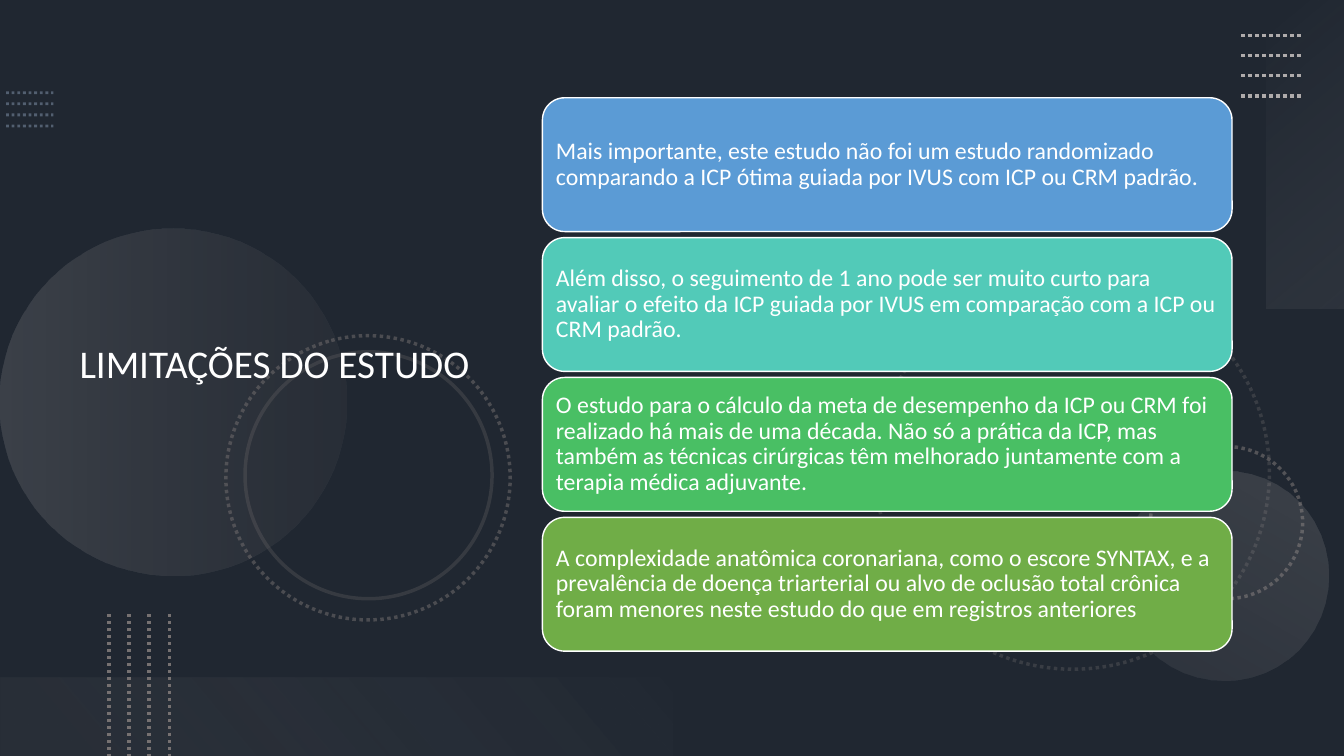
from pptx import Presentation
from pptx.dml.color import RGBColor
from pptx.enum.dml import MSO_LINE
from pptx.enum.shapes import MSO_CONNECTOR, MSO_SHAPE
from pptx.enum.text import MSO_ANCHOR, PP_ALIGN
from pptx.oxml.ns import qn
from pptx.util import Inches, Pt
from lxml.etree import SubElement

LIMITS = [
    ("5B9BD5", "Mais importante, este estudo não foi um estudo randomizado comparando "
               "a ICP ótima guiada por IVUS com ICP ou CRM padrão."),
    ("52CAB8", "Além disso, o seguimento de 1 ano pode ser muito curto para avaliar o efeito "
               "da ICP guiada por IVUS em comparação com a ICP ou CRM padrão."),
    ("49BF64", "O estudo para o cálculo da meta de desempenho da ICP ou CRM foi realizado há mais "
               "de uma década. Não só a prática da ICP, mas também as técnicas cirúrgicas têm "
               "melhorado juntamente com a terapia médica adjuvante."),
    ("70AD47", "A complexidade anatômica coronariana, como o escore SYNTAX, e a prevalência de "
               "doença triarterial ou alvo de oclusão total crônica foram menores neste estudo "
               "do que em registros anteriores"),
]


def rgb(color):
    return RGBColor.from_string(color)


def set_opacity(sp, *percents):
    """Give the colours of a shape, in order, their opacity."""
    colors = list(sp._element.spPr.iter(qn("a:srgbClr")))
    for color, percent in zip(colors, percents):
        SubElement(color, qn("a:alpha")).set("val", str(percent * 1000))


def set_line(line, color, width, dotted=False):
    line.color.rgb = rgb(color)
    line.width = Pt(width)
    if dotted:
        line.dash_style = MSO_LINE.ROUND_DOT


def add_shape(s, kind, box, rotation=0):
    sp = s.shapes.add_shape(kind, *map(Inches, box))
    sp.shadow.inherit = False
    sp.rotation = rotation
    sp.fill.background()
    sp.line.fill.background()
    return sp


def add_gradient(s, kind, box, rotation, angle, stops):
    sp = add_shape(s, kind, box, rotation)
    sp.fill.gradient()
    sp.fill.gradient_angle = 360 - angle
    for stop, (position, color, _) in zip(sp.fill.gradient_stops, stops):
        stop.position = position
        stop.color.rgb = rgb(color)
    set_opacity(sp, *[opacity for _, _, opacity in stops])


def add_ring(s, box, opacity, dotted=True):
    sp = add_shape(s, MSO_SHAPE.OVAL, box, 75)
    set_line(sp.line, "767171", 2.5, dotted)
    set_opacity(sp, opacity)


def add_dots(s, box, color, width=2.5, vertical=False, opacity=100):
    """Four evenly spaced dotted lines that fill the box."""
    x, y, w, h = box
    for i in range(4):
        if vertical:
            ends = x + i * w / 3, y, x + i * w / 3, y + h
        else:
            ends = x, y + i * h / 3, x + w, y + i * h / 3
        line = s.shapes.add_connector(MSO_CONNECTOR.STRAIGHT, *map(Inches, ends))
        set_line(line.line, color, width, True)
        set_opacity(line, opacity)
        SubElement(line._element.spPr, qn("a:effectLst"))


def add_text(sp, text, size, margin, space_after=0):
    tf = sp.text_frame
    frame = dict(word_wrap=True, vertical_anchor=MSO_ANCHOR.MIDDLE)
    frame.update({f"margin_{side}": Inches(margin) for side in ("left", "right", "top", "bottom")})
    for name, value in frame.items():
        setattr(tf, name, value)
    p = tf.paragraphs[0]
    for name, value in dict(alignment=PP_ALIGN.LEFT, line_spacing=0.9,
                            space_after=Pt(space_after)).items():
        setattr(p, name, value)
    r = p.add_run()
    r.text = text
    for name, value in dict(name="Calibri", size=Pt(size)).items():
        setattr(r.font, name, value)
    r.font.color.rgb = rgb("FFFFFF")


def add_backdrop(s, box):
    x, y, w, h = box
    right, bottom = x + w, y + h
    s.background.fill.solid()
    s.background.fill.fore_color.rgb = rgb("44546A")
    shade = add_shape(s, MSO_SHAPE.RECTANGLE, box)
    shade.fill.solid()
    shade.fill.fore_color.rgb = rgb("000000")
    set_opacity(shade, 53)
    add_dots(s, (x + 0.06, y + 0.92, 0.47, 0.33), "8497B0", 2, opacity=50)

    # Rings and discs
    add_ring(s, (right - 4.64, y + 2.74, 3.9, 3.9), 30)
    add_ring(s, (right - 1.92, y + 4.43, 1.51, 1.51), 60)
    add_gradient(s, MSO_SHAPE.OVAL, (x, y + 2.27, 3.44, 3.44), 270, 90,
                 [(0, "AFABAB", 20), (1, "767171", 10)])
    add_gradient(s, MSO_SHAPE.OVAL, (right - 2.23, y + 4.67, 2.08, 2.08), 210, 90,
                 [(0, "AFABAB", 10), (1, "AFABAB", 20)])
    add_ring(s, (x + 2.24, y + 3.33, 2.82, 2.82), 50)
    add_ring(s, (x + 2.43, y + 3.49, 2.45, 2.45), 25, dotted=False)

    # Corner bands and dots
    add_gradient(s, MSO_SHAPE.RECTANGLE, (right - 1.91, y + 1.14, 3.06, 0.78), 270, 140,
                 [(0, "F5F5F5", 0), (1, "AFABAB", 10)])
    add_dots(s, (right - 1.02, y + 0.35, 0.6, 0.6), "AFABAB")
    add_gradient(s, MSO_SHAPE.RECTANGLE, (x, bottom - 0.78, w / 2, 0.78), 180, 140,
                 [(0.1, "767171", 10), (1, "F1F0F0", 0)])
    add_dots(s, (x + 1.08, bottom - 1.41, 0.6, 1.41), "767171", vertical=True)


def add_title(s, box, text):
    add_text(s.shapes.add_textbox(*map(Inches, box)), text, 28, 0.1)


def add_cards(s, box, cards, gap=0.06):
    x, y, w, h = box
    card_h = (h + gap) / len(cards) - gap
    for i, (color, text) in enumerate(cards):
        sp = add_shape(s, MSO_SHAPE.ROUNDED_RECTANGLE, (x, y + i * (card_h + gap), w, card_h))
        sp.fill.solid()
        sp.fill.fore_color.rgb = rgb(color)
        set_line(sp.line, "FFFFFF", 1)
        add_text(sp, text, 17, 0.07, space_after=6)


def main():
    prs = Presentation()
    prs.slide_width, prs.slide_height = Inches(13.33), Inches(7.5)
    s = prs.slides.add_slide(prs.slide_layouts[6])
    add_backdrop(s, (0, 0, 13.33, 7.5))
    add_title(s, (0.69, 0.54, 4.59, 6.17), "LIMITAÇÕES DO ESTUDO")
    add_cards(s, (5.38, 0.97, 6.84, 5.49), LIMITS)
    prs.save("out.pptx")


if __name__ == "__main__":
    main()
